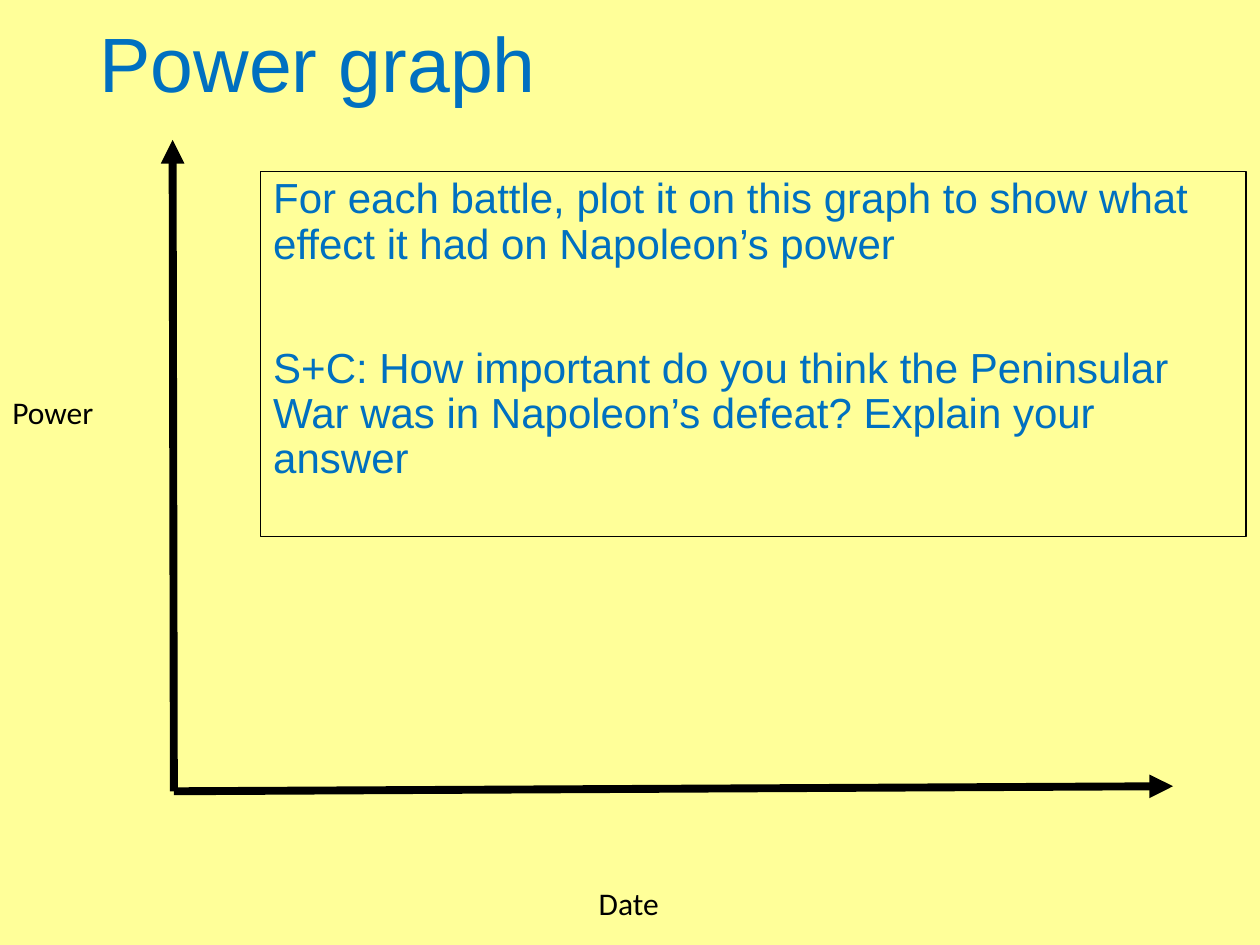
from dataclasses import dataclass

from lxml import etree
from pptx import Presentation
from pptx.dml.color import RGBColor
from pptx.enum.shapes import MSO_CONNECTOR
from pptx.enum.text import MSO_ANCHOR, PP_ALIGN
from pptx.oxml.ns import qn
from pptx.util import Inches, Pt

BLACK = RGBColor(0x00, 0x00, 0x00)
BLUE = RGBColor(0x00, 0x70, 0xC0)
CREAM = RGBColor(0xFF, 0xFF, 0x99)
LEFT, CENTER = PP_ALIGN.LEFT, PP_ALIGN.CENTER
TOP, MIDDLE = MSO_ANCHOR.TOP, MSO_ANCHOR.MIDDLE
STRAIGHT = MSO_CONNECTOR.STRAIGHT


@dataclass
class Label:
    box: tuple[float, float, float, float]
    lines: list[str]
    font: dict
    align: int = LEFT
    anchor: int = TOP
    spacing: float = 1.0
    gap: float = 0
    border: bool = False


@dataclass
class Axis:
    start: tuple[float, float]
    end: tuple[float, float]


def draw_label(slide, label: Label) -> None:
    shape = slide.shapes.add_textbox(*map(Inches, label.box))
    if label.border:
        shape.line.color.rgb = BLACK
        shape.line.width = Pt(0.75)
    frame = shape.text_frame
    frame.word_wrap = True
    frame.vertical_anchor = label.anchor
    for i, line in enumerate(label.lines):
        para = frame.add_paragraph() if i else frame.paragraphs[0]
        style = {"alignment": label.align, "line_spacing": label.spacing,
                 "space_before": Pt(label.gap if i else 0)}
        for name, value in style.items():
            setattr(para, name, value)
        run = para.add_run()
        run.text = line
        for name, value in label.font.items():
            if name == "color":
                run.font.color.rgb = value
            else:
                setattr(run.font, name, value)


def draw_axis(slide, axis: Axis) -> None:
    ends = map(Inches, axis.start + axis.end)
    line = slide.shapes.add_connector(STRAIGHT, *ends)
    line.line.color.rgb = BLACK
    line.line.width = Pt(4.5)
    # Arrowhead, and no shadow
    etree.SubElement(line.line._get_or_add_ln(), qn("a:tailEnd"), type="triangle")
    etree.SubElement(line._element.spPr, qn("a:effectLst"))


HEAD = {"name": "Arial", "size": Pt(44), "color": BLUE}
BODY = {"name": "Arial", "size": Pt(24), "color": BLUE}
NOTE = {"name": "Calibri", "size": Pt(18), "color": BLACK}

TITLE = Label((0.69, -0.19, 8.62, 1.45), ["Power graph"], HEAD,
              anchor=MIDDLE, spacing=0.9)
TASK = Label(
    (2.07, 1.36, 7.82, 2.9),
    ["For each battle, plot it on this graph to show what effect it had "
     "on Napoleon’s power",
     "S+C: How important do you think the Peninsular War was in Napoleon’s "
     "defeat? Explain your answer"],
    BODY, spacing=0.9, gap=45, border=True)
NAMES = [
    Label((0, 3.07, 1.26, 0.4), ["Power"], NOTE),
    Label((3.8, 6.97, 2.38, 0.4), ["Date"], NOTE, align=CENTER),
]
ORIGIN = (1.38, 6.28)
AXES = [Axis(ORIGIN, (9.31, 6.24)), Axis(ORIGIN, (1.37, 1.11))]


def main() -> None:
    deck = Presentation()
    deck.slide_width, deck.slide_height = Inches(10), Inches(7.5)
    slide = deck.slides.add_slide(deck.slide_layouts[6])
    slide.background.fill.solid()
    slide.background.fill.fore_color.rgb = CREAM

    # Title and task
    for label in (TITLE, TASK):
        draw_label(slide, label)

    # Axes and their names
    for axis in AXES:
        draw_axis(slide, axis)
    for label in NAMES:
        draw_label(slide, label)

    deck.save("out.pptx")


if __name__ == "__main__":
    main()
